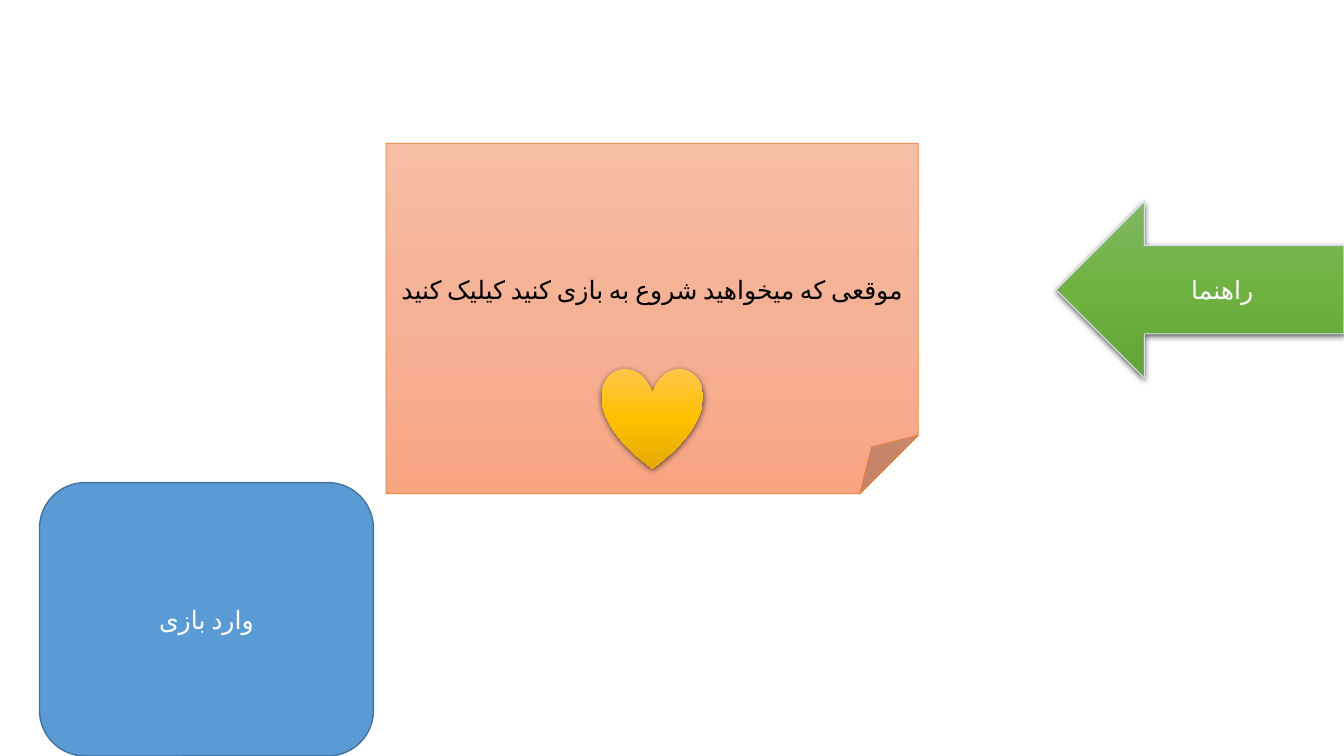
from lxml.etree import SubElement
from pptx import Presentation
from pptx.dml.color import RGBColor
from pptx.enum.shapes import MSO_SHAPE as SHAPE
from pptx.enum.text import MSO_ANCHOR as ANCHOR, PP_ALIGN as ALIGN
from pptx.oxml.ns import qn
from pptx.util import Pt

FONT = "Calibri"
COLORS = {
    "white": "FFFFFF",
    "black": "000000",
    "arrow_edge": "D6DCE5",
    "note_edge": "ED7D31",
    "button": "5B9BD5",
    "button_edge": "43739E",
    "green_top": "81B861", "green_mid": "6FB242", "green_low": "62A336",
    "peach_top": "F7BDA5", "peach_mid": "F5B196", "peach_low": "F8A582",
    "gold_top": "FFC64B", "gold_mid": "FFC000", "gold_low": "E3AB00",
}


def rgb(color):
    return RGBColor.from_string(COLORS[color])


def add_figure(slide, kind, left, top, width, height, edge=None, edge_width=0):
    figure = slide.shapes.add_shape(kind, Pt(left), Pt(top), Pt(width), Pt(height))
    figure.shadow.inherit = False
    if edge:
        figure.line.color.rgb = rgb(edge)
        figure.line.width = Pt(edge_width)
    else:
        figure.line.fill.background()
    return figure


def fill_gradient(figure, hue):
    """Fill from top to bottom with the three shades of a hue."""
    figure.fill.gradient()
    figure.fill.gradient_angle = 270
    stops = figure._element.spPr.find(qn("a:gradFill")).find(qn("a:gsLst"))
    for stop in list(stops):
        stops.remove(stop)
    for position, shade in enumerate(("top", "mid", "low")):
        stop = SubElement(stops, qn("a:gs"), pos=str(position * 50000))
        SubElement(stop, qn("a:srgbClr"), val=COLORS[f"{hue}_{shade}"])


def drop_shadow(figure):
    effects = figure._element.spPr.find(qn("a:effectLst"))
    shadow = SubElement(effects, qn("a:outerShdw"), blurRad=str(Pt(4.5)),
                        dist=str(Pt(1.5)), dir="5400000", algn="ctr", rotWithShape="0")
    tint = SubElement(shadow, qn("a:srgbClr"), val=COLORS["black"])
    SubElement(tint, qn("a:alpha"), val="63000")


def write_persian(figure, wording, color):
    """Write centred right-to-left text, with the font set for complex script too."""
    frame = figure.text_frame
    frame.word_wrap = True
    frame.vertical_anchor = ANCHOR.MIDDLE
    paragraph = frame.paragraphs[0]
    paragraph.alignment = ALIGN.CENTER
    paragraph._p.get_or_add_pPr().set("rtl", "1")
    run = paragraph.add_run()
    run.text = wording
    run.font.name = FONT
    run.font.size = Pt(18)
    run.font.color.rgb = rgb(color)
    properties = run._r.get_or_add_rPr()
    properties.set("lang", "fa-IR")
    SubElement(properties, qn("a:cs"), typeface=FONT)


def main():
    deck = Presentation()
    deck.slide_width, deck.slide_height = Pt(960), Pt(540)
    slide = deck.slides.add_slide(deck.slide_layouts[6])

    guide = add_figure(slide, SHAPE.LEFT_ARROW, 754.5, 144, 205.5, 126, "arrow_edge", 0.75)
    fill_gradient(guide, "green")
    drop_shadow(guide)
    write_persian(guide, "راهنما", "white")

    note = add_figure(slide, SHAPE.FOLDED_CORNER, 275.75, 102.25, 380.25, 250.5, "note_edge", 0.5)
    fill_gradient(note, "peach")
    write_persian(note, "موقعی که میخواهید شروع به بازی کنید کیلیک کنید", "black")

    heart = add_figure(slide, SHAPE.HEART, 430, 262.75, 72, 72)
    fill_gradient(heart, "gold")
    drop_shadow(heart)

    enter = add_figure(slide, SHAPE.ROUNDED_RECTANGLE, 28.25, 344.75, 238.5, 195.25, "button_edge", 1)
    enter.fill.solid()
    enter.fill.fore_color.rgb = rgb("button")
    write_persian(enter, "وارد بازی", "white")

    deck.save("out.pptx")


if __name__ == "__main__":
    main()
